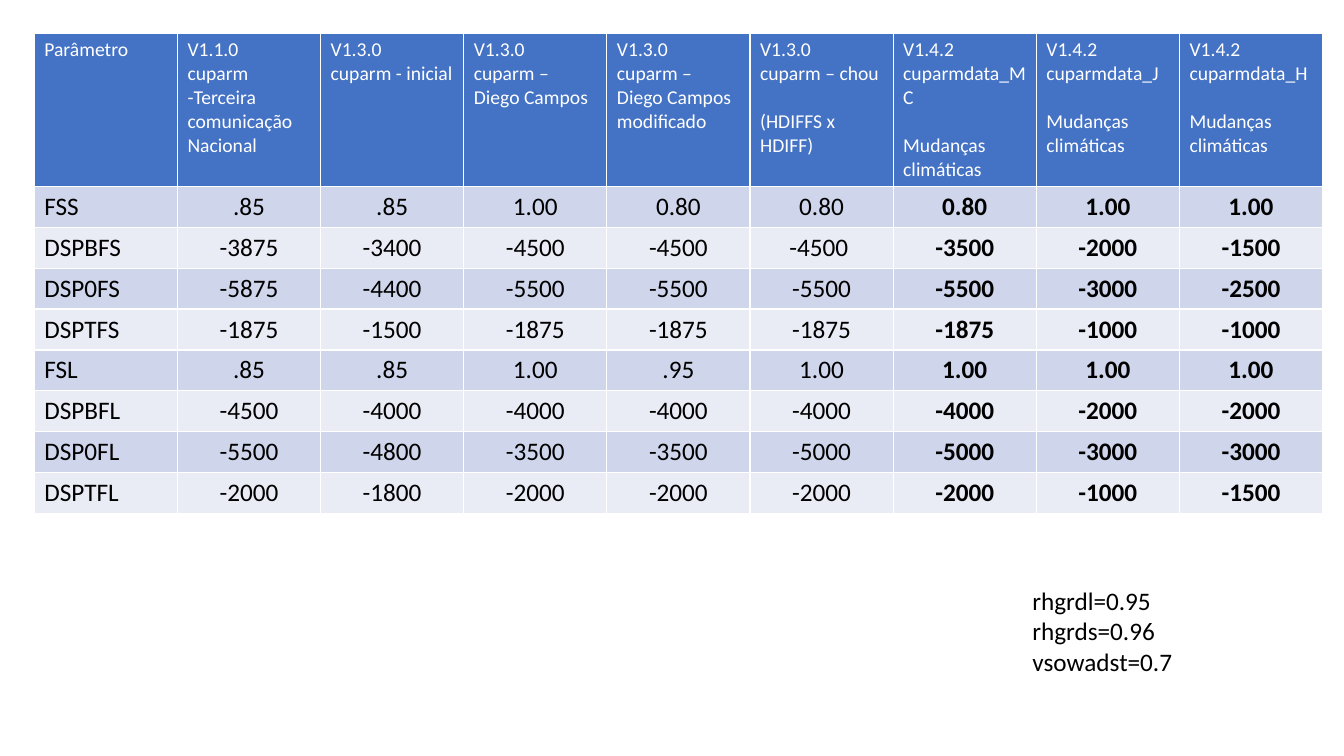
"""Build a slide comparing cuparm parameter values across model versions."""
import pptx
import pptx.dml.color
import pptx.enum.text
import pptx.util

Inches = pptx.util.Inches
Pt = pptx.util.Pt
RGBColor = pptx.dml.color.RGBColor
PP_ALIGN = pptx.enum.text.PP_ALIGN

WHITE = RGBColor(0xFF, 0xFF, 0xFF)
BLACK = RGBColor(0x00, 0x00, 0x00)
BLUE = RGBColor(0x44, 0x72, 0xC4)
BANDS = (RGBColor(0xCF, 0xD5, 0xEA), RGBColor(0xE9, 0xEB, 0xF5))

HEADERS = [
    ["Parâmetro"],
    ["V1.1.0", "cuparm -Terceira comunicação Nacional"],
    ["V1.3.0", "cuparm - inicial"],
    ["V1.3.0", "cuparm – Diego Campos"],
    ["V1.3.0", "cuparm – Diego Campos modificado"],
    ["V1.3.0", "cuparm – chou", "(HDIFFS x HDIFF)"],
    ["V1.4.2", "cuparmdata_MC", "Mudanças climáticas"],
    ["V1.4.2", "cuparmdata_J", "Mudanças climáticas"],
    ["V1.4.2", "cuparmdata_H", "Mudanças climáticas"],
]
ROWS = [
    ["FSS", ".85", ".85", "1.00", "0.80", "0.80", "0.80", "1.00", "1.00"],
    ["DSPBFS", "-3875", "-3400", "-4500", "-4500", "-4500 ", "-3500", "-2000", "-1500"],
    ["DSP0FS", "-5875", "-4400", "-5500", "-5500", "-5500", "-5500", "-3000", "-2500"],
    ["DSPTFS", "-1875", "-1500", "-1875", "-1875", "-1875", "-1875", "-1000", "-1000"],
    ["FSL", ".85", ".85", "1.00", ".95", "1.00", "1.00", "1.00", "1.00"],
    ["DSPBFL", "-4500", "-4000", "-4000", "-4000", "-4000", "-4000", "-2000", "-2000"],
    ["DSP0FL", "-5500", "-4800", "-3500", "-3500", "-5000", "-5000", "-3000", "-3000"],
    ["DSPTFL", "-2000", "-1800", "-2000", "-2000", "-2000", "-2000", "-1000", "-1500"],
]
FIRST_BOLD_COLUMN = 6
HEADER_HEIGHT, ROW_HEIGHT, COLUMN_WIDTH = 1.52, 0.4, 1.42


class SlideBuilder:
    font = "Calibri"
    header_size = 14
    body_size = 18
    group_gap = 17

    def __init__(self, prs):
        self.s = prs.slides.add_slide(prs.slide_layouts[6])

    def add_lines(self, tf, lines, size, color, bold=False, align=PP_ALIGN.LEFT):
        tf.word_wrap = True
        for i, line in enumerate(lines):
            p = tf.add_paragraph() if i else tf.paragraphs[0]
            p.alignment = align
            r = p.add_run()
            r.text = line
            r.font.name = self.font
            r.font.size = Pt(size)
            r.font.bold = bold
            r.font.color.rgb = color

    def fill_cell(self, cell, color):
        cell.fill.solid()
        cell.fill.fore_color.rgb = color

    def add_table(self, left, top, headers, rows):
        width = COLUMN_WIDTH * len(headers)
        height = HEADER_HEIGHT + ROW_HEIGHT * len(rows)
        table = self.s.shapes.add_table(
            len(rows) + 1, len(headers),
            Inches(left), Inches(top), Inches(width), Inches(height)).table
        for column in table.columns:
            column.width = Inches(COLUMN_WIDTH)
        for i, row in enumerate(table.rows):
            row.height = Inches(ROW_HEIGHT if i else HEADER_HEIGHT)
        for j, lines in enumerate(headers):
            cell = table.cell(0, j)
            self.fill_cell(cell, BLUE)
            self.add_lines(cell.text_frame, lines, self.header_size, WHITE)
            for p in cell.text_frame.paragraphs[2:]:
                p.space_before = Pt(self.group_gap)
        for i, values in enumerate(rows):
            for j, value in enumerate(values):
                cell = table.cell(i + 1, j)
                self.fill_cell(cell, BANDS[i % 2])
                self.add_lines(cell.text_frame, [value], self.body_size, BLACK,
                               bold=j >= FIRST_BOLD_COLUMN,
                               align=PP_ALIGN.CENTER if j else PP_ALIGN.LEFT)

    def add_text(self, left, top, width, height, lines):
        sp = self.s.shapes.add_textbox(
            Inches(left), Inches(top), Inches(width), Inches(height))
        self.add_lines(sp.text_frame, lines, self.body_size, BLACK)


def main():
    prs = pptx.Presentation()
    prs.slide_width = Inches(13.33)
    prs.slide_height = Inches(7.5)
    slide = SlideBuilder(prs)
    slide.add_table(0.34, 0.33, HEADERS, ROWS)
    slide.add_text(10.14, 5.76, 2.65, 1.01,
                   ["rhgrdl=0.95", "rhgrds=0.96", "vsowadst=0.7"])
    prs.save("out.pptx")


if __name__ == "__main__":
    main()
